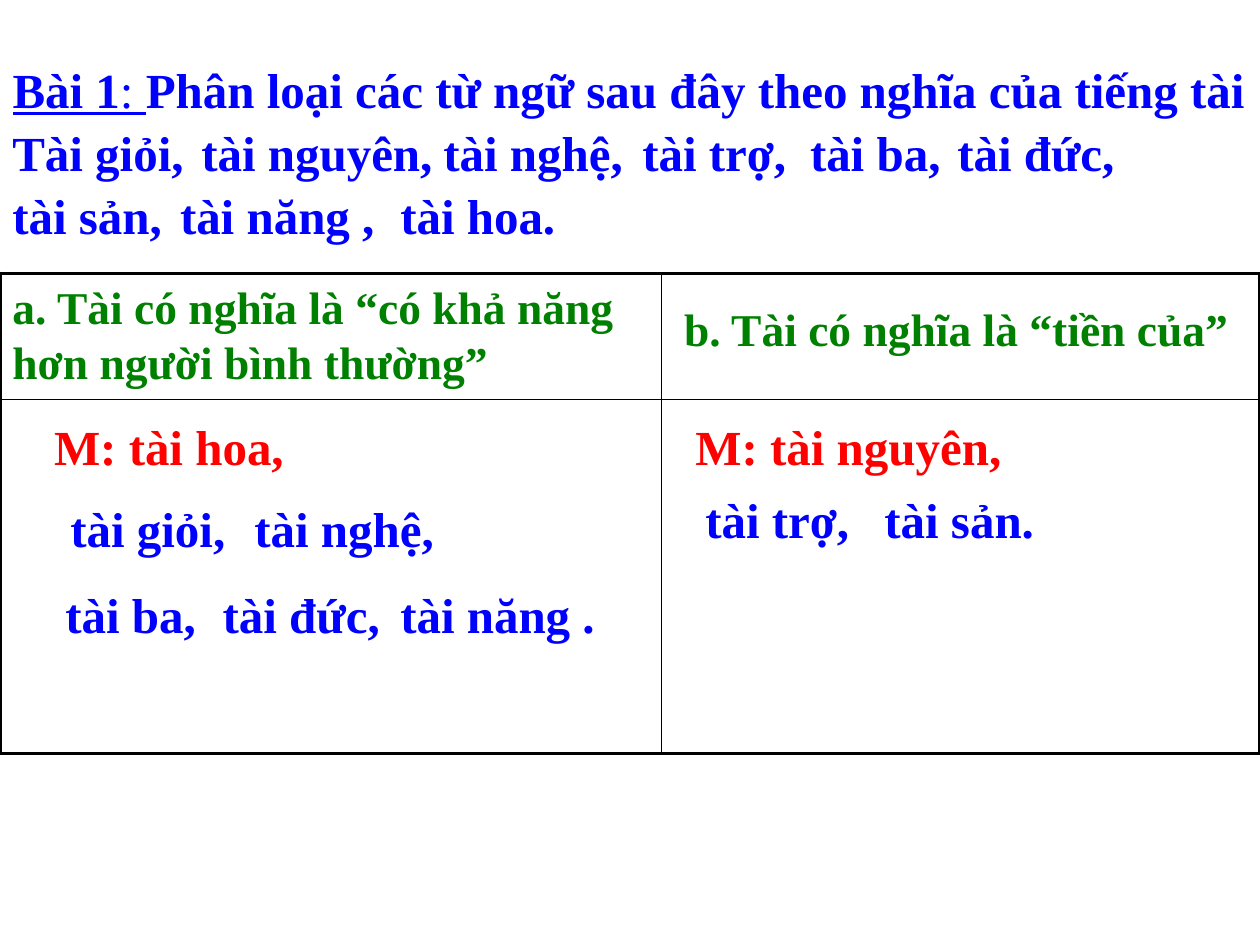
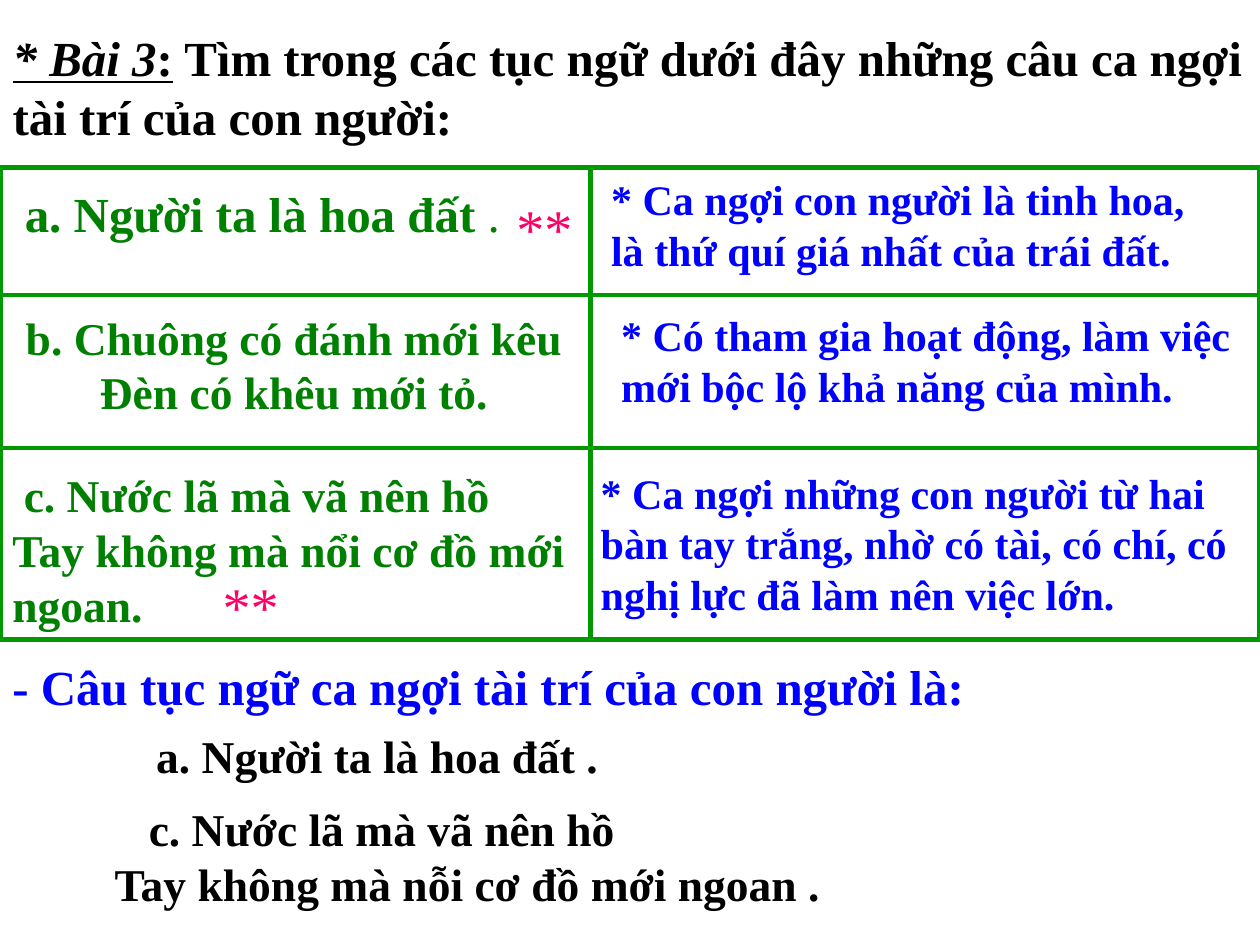
from lxml import etree
from pptx import Presentation
from pptx.dml.color import RGBColor
from pptx.enum.shapes import MSO_CONNECTOR, MSO_SHAPE
from pptx.enum.text import MSO_ANCHOR, MSO_AUTO_SIZE, PP_ALIGN
from pptx.oxml.ns import qn
from pptx.util import Cm, Pt

LEFT, CENTER = PP_ALIGN.LEFT, PP_ALIGN.CENTER
TOP = MSO_ANCHOR.TOP
NO_AUTOFIT = MSO_AUTO_SIZE.NONE
STRAIGHT = MSO_CONNECTOR.STRAIGHT
RECTANGLE = MSO_SHAPE.RECTANGLE

FONT = "Times New Roman"
BLACK = RGBColor(0x00, 0x00, 0x00)
BLUE = RGBColor(0x00, 0x00, 0xFF)
RED = RGBColor(0xFF, 0x00, 0x00)
GREEN = RGBColor(0x00, 0x80, 0x00)
GRID_GREEN = RGBColor(0x00, 0x99, 0x00)
PINK = RGBColor(0xFF, 0x00, 0x66)

SLIDE_WIDTH, SLIDE_HEIGHT = 25.4, 19.05
LINE_HEIGHT = 1.45


def add_text(slide, text, left, top, width, height, size, color,
             bold=True, align=LEFT, first_indent=0):
    """Add a text box in one format; each line of text is a paragraph."""
    box = slide.shapes.add_textbox(Cm(left), Cm(top), Cm(width), Cm(height))
    frame = box.text_frame
    frame.word_wrap = True
    frame.text = text
    for paragraph in frame.paragraphs:
        paragraph.alignment = align
        paragraph.font.name = FONT
        paragraph.font.size = Pt(size)
        paragraph.font.bold = bold
        paragraph.font.color.rgb = color
    if first_indent:
        properties = frame.paragraphs[0]._p.get_or_add_pPr()
        properties.set("indent", str(Cm(first_indent)))
    return box


def add_title(slide, top, height, color, runs):
    """Fill the title placeholder with (text, bold, italic, underline) runs."""
    title = slide.shapes.title
    title.left, title.top = Cm(0), Cm(top)
    title.width, title.height = Cm(SLIDE_WIDTH), Cm(height)
    frame = title.text_frame
    frame.word_wrap = True
    frame.auto_size = NO_AUTOFIT
    frame.vertical_anchor = TOP
    paragraph = frame.paragraphs[0]
    paragraph.alignment = LEFT
    paragraph.font.name = FONT
    paragraph.font.size = Pt(28)
    paragraph.font.color.rgb = color
    for text, bold, italic, underline in runs:
        run = paragraph.add_run()
        run.text = text
        run.font.bold = bold
        run.font.italic = italic
        run.font.underline = underline


presentation = Presentation()
presentation.slide_width = Cm(SLIDE_WIDTH)
presentation.slide_height = Cm(SLIDE_HEIGHT)
title_only = presentation.slide_layouts[5]

# Slide 1: sorting words by the meaning of "tài"
slide = presentation.slides.add_slide(title_only)
add_title(slide, 1.07, LINE_HEIGHT, BLUE, [
    ("Bài 1", True, False, True),
    (": ", False, False, True),
    ("Phân loại các từ ngữ sau đây theo nghĩa của tiếng tài", True, False, False),
])

# Two-column table with a heavier outer frame
table = slide.shapes.add_table(2, 2, Cm(0), Cm(5.51), Cm(SLIDE_WIDTH), Cm(9.68)).table
table.first_row = False
table.horz_banding = False
for column, width in zip(table.columns, (13.34, 12.06)):
    column.width = Cm(width)
for row, height in zip(table.rows, (2.54, 7.14)):
    row.height = Cm(height)
for row in range(2):
    for column in range(2):
        cell = table.cell(row, column)
        properties = cell._tc.get_or_add_tcPr()
        outer_sides = ("lnR" if column else "lnL", "lnB" if row else "lnT")
        for side in ("lnL", "lnR", "lnT", "lnB"):
            weight = 2.25 if side in outer_sides else 1
            border = etree.SubElement(properties, qn(f"a:{side}"), w=str(Pt(weight)))
            fill = etree.SubElement(border, qn("a:solidFill"))
            etree.SubElement(fill, qn("a:srgbClr"), val=str(BLACK))
        cell.fill.background()

# Words: first the list to sort, then the sorted answers
word_rows = [
    (2.34, [("Tài giỏi,", 0, 4.24), ("tài nguyên,", 3.81, 5.72),
            ("tài nghệ,", 8.69, 4.45), ("tài trợ,", 12.7, 4.88),
            ("tài ba,", 16.08, 4.01), ("tài đức,", 19.05, 4.01)]),
    (3.61, [("tài sản,", 0, 4.01), ("tài năng ,", 3.38, 5.08),
            ("tài hoa.", 7.82, 4.01)]),
    (9.93, [("tài giỏi,", 1.17, 4.24), ("tài nghệ,", 4.88, 4.45)]),
    (9.75, [("tài trợ,", 13.97, 3.61), ("tài sản.", 17.58, 4.01)]),
    (11.66, [("tài ba,", 1.07, 4.01), ("tài đức,", 4.24, 4.01),
             ("tài năng .", 7.82, 5.08)]),
]
for top, words in word_rows:
    for word, left, width in words:
        add_text(slide, word, left, top, width, LINE_HEIGHT, 28, BLUE)

# Sample answers and column headings
add_text(slide, "M: tài hoa,", 0.84, 8.28, 6.78, LINE_HEIGHT, 28, RED)
add_text(slide, "M: tài nguyên,", 13.77, 8.28, 7.19, LINE_HEIGHT, 28, RED)
add_text(slide, "a. Tài có nghĩa là “có khả năng hơn người bình thường”",
         0, 5.51, 13.13, 2.46, 26, GREEN)
add_text(slide, "b. Tài có nghĩa là “tiền của”", 13.54, 5.94, 11.86, 1.35, 26, GREEN)

# Slide 2: proverbs that praise talent
slide = presentation.slides.add_slide(title_only)
add_title(slide, 0.43, 2.64, BLACK, [
    ("* Bài 3", True, True, True),
    (":", True, False, True),
    (" Tìm trong các tục ngữ dưới đây những câu ca ngợi tài trí của con người:",
     True, False, False),
])

# Proverbs
proverb_a = add_text(slide, "a. Người ta là hoa đất", 0, 3.58, 11.86, LINE_HEIGHT,
                     28, GREEN, first_indent=0.25)
full_stop = proverb_a.text_frame.paragraphs[0].add_run()
full_stop.text = " ."
full_stop.font.bold = False
add_text(slide, "b. Chuông có đánh mới kêu\nĐèn có khêu mới tỏ.",
         0, 6.12, 11.86, 2.46, 26, GREEN, align=CENTER)
add_text(slide, "c. Nước lã mà vã nên hồ\nTay không mà nổi cơ đồ mới ngoan.",
         0, 9.3, 12.9, 3.56, 26, GREEN, first_indent=0.23)

# Meanings
meanings = [
    ("* Ca ngợi con người là tinh hoa, là thứ quí giá nhất của trái đất.",
     12.07, 3.38, 12.5, 2.29),
    ("* Có tham gia hoạt động, làm việc mới bộc lộ khả năng của mình.",
     12.27, 6.12, 13.13, 2.29),
    ("* Ca ngợi những con người từ hai bàn tay trắng, nhờ có tài, có chí, "
     "có nghị lực đã làm nên việc lớn.", 11.86, 9.3, 13.54, 3.3),
]
for text, left, top, width, height in meanings:
    add_text(slide, text, left, top, width, height, 24, BLUE)

# Grid around proverbs and meanings
grid_top, grid_bottom, divider = 3.38, 12.9, 11.91
frame = slide.shapes.add_shape(RECTANGLE, Cm(0), Cm(grid_top),
                               Cm(SLIDE_WIDTH), Cm(grid_bottom - grid_top))
frame.shadow.inherit = False
frame.fill.background()
frame.line.color.rgb = GRID_GREEN
frame.line.width = Pt(3)
grid_lines = [(divider, grid_top, divider, grid_bottom, 3)]
grid_lines += [(0, y, SLIDE_WIDTH, y, 2.25) for y in (5.94, 9.04)]
for x1, y1, x2, y2, weight in grid_lines:
    line = slide.shapes.add_connector(STRAIGHT, Cm(x1), Cm(y1), Cm(x2), Cm(y2))
    line.line.color.rgb = GRID_GREEN
    line.line.width = Pt(weight)
    etree.SubElement(line._element.spPr, qn("a:effectLst"))

# Marks beside the chosen proverbs
for left, top in ((10.16, 3.78), (4.24, 11.4)):
    add_text(slide, "**", left, top, 1.7, 1.6, 32, PINK, bold=False)

# Answer
add_text(slide, "- Câu tục ngữ ca ngợi tài trí của con người là:",
         0, 13.11, SLIDE_WIDTH, LINE_HEIGHT, 28, BLUE)
add_text(slide, "a. Người ta là hoa đất .", 2.9, 14.55, 9.42, 1.35, 26, BLACK)
add_text(slide, "c. Nước lã mà vã nên hồ\nTay không mà nỗi cơ đồ mới ngoan .",
         2.06, 16.03, 18.21, 2.46, 26, BLACK, first_indent=0.69)

presentation.save("out.pptx")
